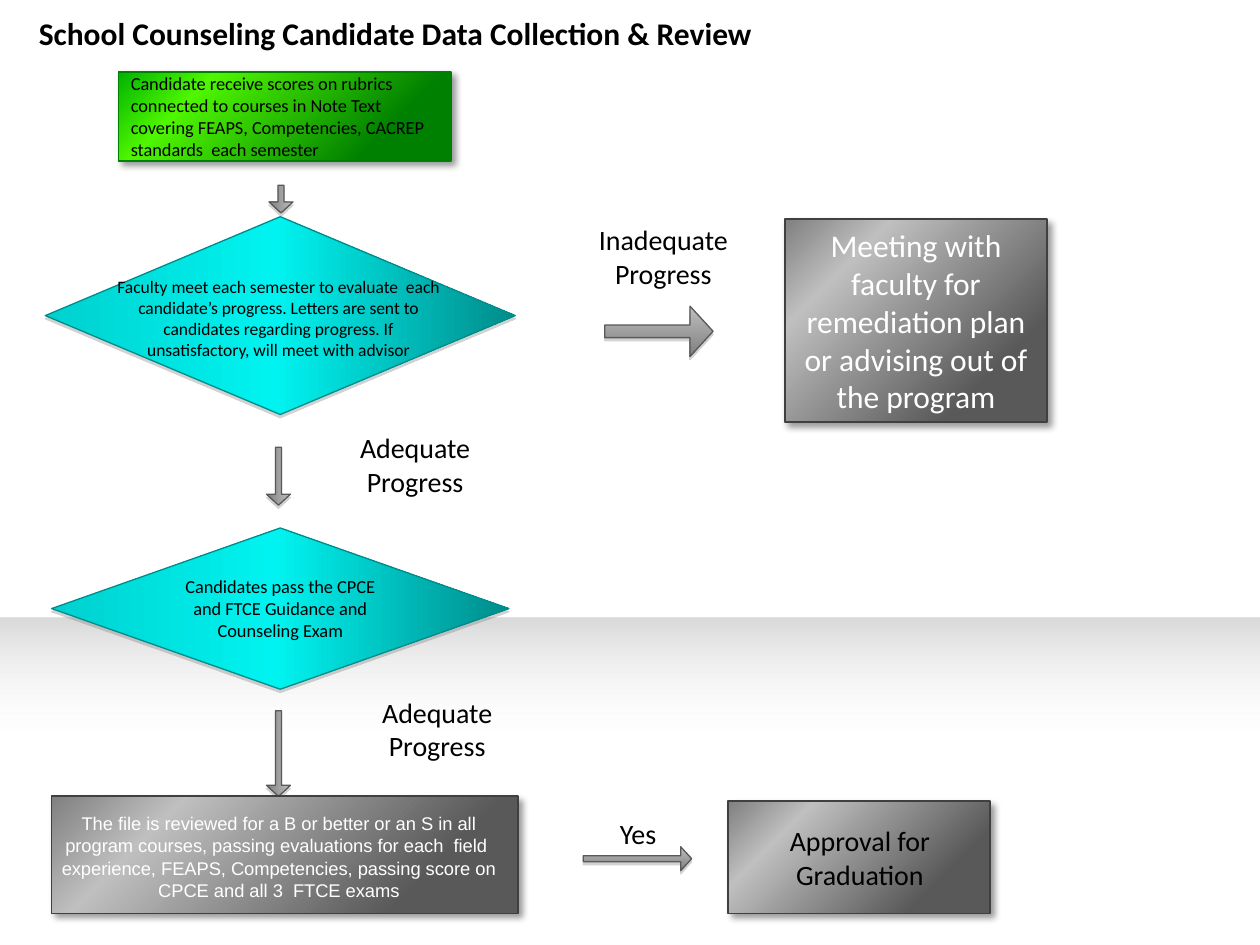
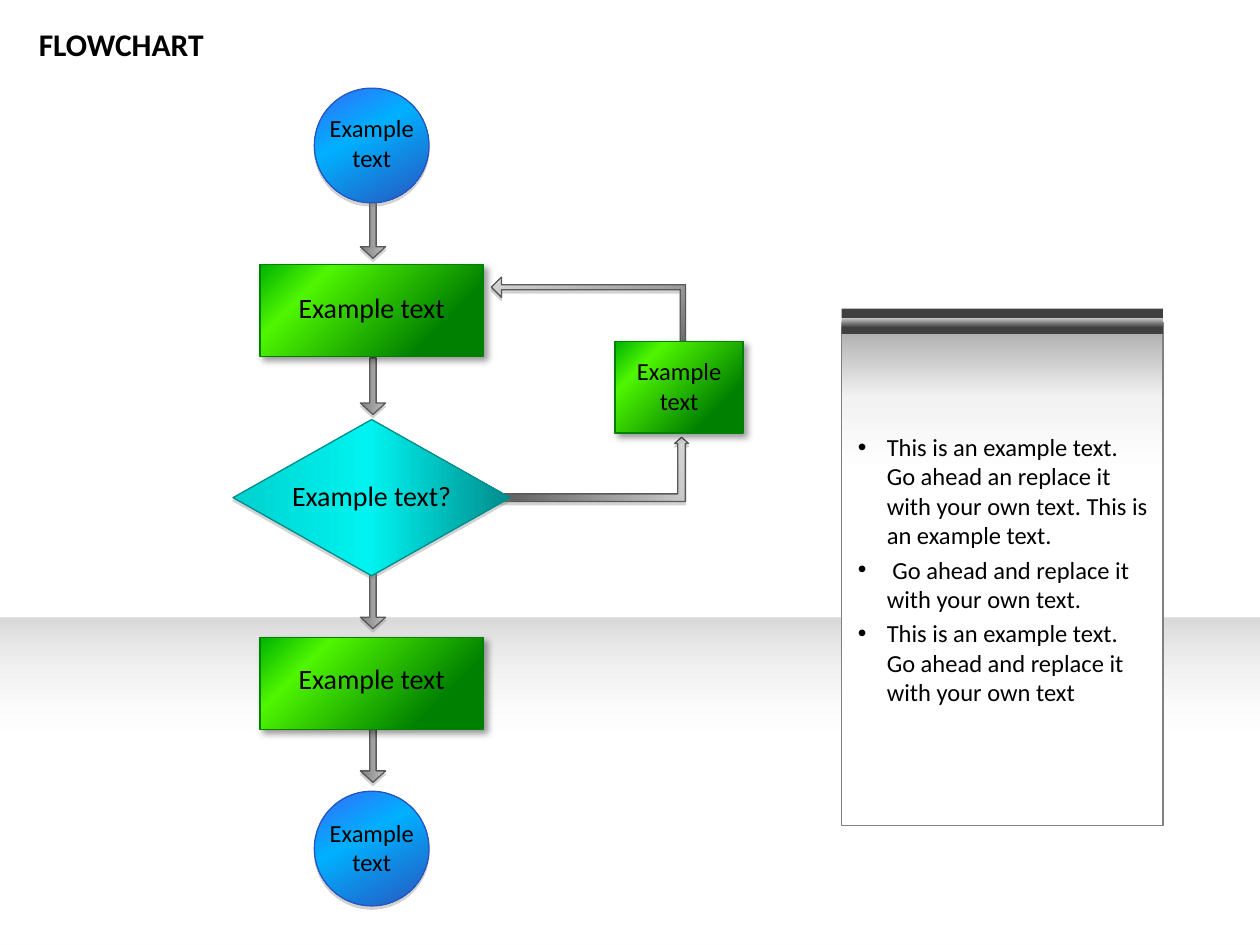
from lxml import etree
from pptx import Presentation
from pptx.dml.color import RGBColor
from pptx.enum.shapes import MSO_SHAPE
from pptx.enum.text import MSO_ANCHOR, MSO_AUTO_SIZE, PP_ALIGN
from pptx.oxml.ns import qn
from pptx.util import Inches, Pt

RECT, DIAMOND, OVAL = MSO_SHAPE.RECTANGLE, MSO_SHAPE.DIAMOND, MSO_SHAPE.OVAL
ARROW = MSO_SHAPE.RIGHT_ARROW
LEFT, CENTER = PP_ALIGN.LEFT, PP_ALIGN.CENTER
TOP, MIDDLE = MSO_ANCHOR.TOP, MSO_ANCHOR.MIDDLE
GROW = MSO_AUTO_SIZE.SHAPE_TO_FIT_TEXT
BLACK, WHITE = "000000", "FFFFFF"

# Shadows: colour, opacity %, blur pt, distance pt, direction
SOFT = ("808080", 35, 0, 1.8, 90)
DROP = (BLACK, 40, 4, 3, 45)

# Looks: gradient stops (position %, colour, opacity %), angle, line, shadow
GREEN = dict(stops=[(22, "008000"), (77, "4FF600"), (100, "00B300")],
             angle=225, line=("008000", 1), shadow=DROP)
GRAY = dict(stops=[(22, "595959"), (77, "BFBFBF"), (100, "808080")],
            angle=225, line=("404040", 1), shadow=DROP)
CYAN = dict(stops=[(0, "00D1CF"), (49, "00F3F0"), (100, "008C8B")],
            angle=0, line=("008C8B", 0.75), shadow=SOFT)
BLUE = dict(stops=[(0, "336FFA"), (2, "336FFA"), (40, "00B0FF"), (100, "2856BF")],
            angle=61, line=("2856BF", 0.75), shadow=SOFT)
STEEL = dict(stops=[(0, "BFBFBF"), (100, "7F7F7F")],
             angle=90, line=("595959", 0.75), shadow=SOFT)
ELBOW = dict(STEEL, stops=[(0, "595959"), (100, "D9D9D9")])
BAND = dict(stops=[(61, WHITE, 0), (100, "D9D9D9")], angle=270)
PANEL = dict(stops=[(70, WHITE), (85, "F2F2F2"), (100, "A6A6A6")],
             angle=270, line=("808080", 0.75))
GLOSS = dict(stops=[(0, "F3F3F3", 0), (100, "FFFCF9", 79)], angle=270)


def rgb(value):
    return RGBColor.from_string(value)


def add_color(parent, color, opacity=100):
    clr = etree.SubElement(parent, qn("a:srgbClr"), val=color)
    if opacity < 100:
        etree.SubElement(clr, qn("a:alpha"), val=str(opacity * 1000))


def paint(sp, stops=None, angle=0, solid=None, line=None, shadow=None):
    if solid:
        sp.fill.solid()
        sp.fill.fore_color.rgb = rgb(solid)
    else:
        sp.fill.gradient()
        sp.fill.gradient_angle = (360 - angle) % 360
        gs_list = sp._element.spPr.find(qn("a:gradFill")).find(qn("a:gsLst"))
        for gs in list(gs_list):
            gs_list.remove(gs)
        for pos, *color in stops:
            add_color(etree.SubElement(gs_list, qn("a:gs"), pos=str(pos * 1000)), *color)
    if line:
        sp.line.color.rgb = rgb(line[0])
        sp.line.width = Pt(line[1])
    else:
        sp.line.fill.background()
    sp.shadow.inherit = False
    if shadow:
        color, opacity, blur, dist, direction = shadow
        outer = etree.SubElement(
            sp._element.spPr.find(qn("a:effectLst")), qn("a:outerShdw"),
            blurRad=str(Pt(blur)), dist=str(Pt(dist)),
            dir=str(direction * 60000), algn="tl", rotWithShape="0")
        add_color(outer, color, opacity)


def write(sp, paragraphs, size, color=BLACK, align=CENTER, bold=False,
          font="Calibri", anchor=TOP):
    tf = sp.text_frame
    tf.word_wrap = True
    tf.vertical_anchor = anchor
    for i, text in enumerate(paragraphs):
        p = tf.add_paragraph() if i else tf.paragraphs[0]
        p.alignment = align
        r = p.add_run()
        r.text = text
        for key, value in dict(name=font, size=Pt(size), bold=bold).items():
            setattr(r.font, key, value)
        r.font.color.rgb = rgb(color)
    return tf


def shape(s, kind, x, y, w, h, look):
    sp = s.shapes.add_shape(kind, *map(Inches, (x, y, w, h)))
    paint(sp, **look)
    return sp


def label(s, x, y, w, h, text, size=16, **fmt):
    sp = s.shapes.add_textbox(*map(Inches, (x, y, w, h)))
    tf = write(sp, [text] if isinstance(text, str) else text, size, **fmt)
    tf.auto_size = GROW
    return tf


def block_arrow(s, x, y, length, width):
    """Arrow to the right from the top left corner x, y."""
    sp = shape(s, ARROW, x, y, length, width, STEEL)
    sp.adjustments[0], sp.adjustments[1] = 0.25, 0.458
    return sp


def down_arrow(s, cx, y, length, width):
    """Arrow downwards from y, centred on cx."""
    sp = block_arrow(s, cx - length / 2, y + (length - width) / 2, length, width)
    sp.rotation = 90


def elbow_arrow(s, start, corner, tip, half, head, head_len, angle):
    """Bent arrow outlined around the line start - corner - tip."""
    def unit(a, b):
        dx, dy = b[0] - a[0], b[1] - a[1]
        size = abs(dx) + abs(dy)
        return dx / size, dy / size

    u, v = unit(start, corner), unit(corner, tip)

    def at(point, along_u, along_v):
        return tuple(Inches(point[i] + along_u * u[i] + along_v * v[i]) for i in (0, 1))

    outline = [at(start, 0, half), at(corner, -half, half),
               at(tip, -half, -head_len), at(tip, -head, -head_len), at(tip, 0, 0),
               at(tip, head, -head_len), at(tip, half, -head_len),
               at(corner, half, -half), at(start, 0, -half)]
    fb = s.shapes.build_freeform(*outline[0])
    fb.add_line_segments(outline[1:], close=True)
    paint(fb.convert_to_shape(), **dict(ELBOW, angle=angle))


def new_slide(prs, title, y, w):
    s = prs.slides.add_slide(prs.slide_layouts[6])
    shape(s, RECT, 0, 4.9, 10, 2.6, BAND)
    label(s, 0.21, y, w, 0.4, title, 18, align=LEFT, bold=True)
    return s


# Slide 1: main column of the review
def review_column(s, x, y):
    for cx, top, length in ((1.87, 0.9, 0.22), (1.85, 2.98, 0.46), (1.85, 5.07, 0.68)):
        down_arrow(s, x + cx, y + top, length, 0.19)
    scores = shape(s, RECT, x + 0.58, y, 2.64, 0.71, GREEN)
    write(scores, ["Candidate receive scores on rubrics connected to courses in Note Text  "
                   "covering FEAPS, Competencies, CACREP standards  each semester"],
          10.5, align=LEFT, anchor=MIDDLE)
    shape(s, DIAMOND, x, y + 1.15, 3.73, 1.57, CYAN)
    label(s, x + 0.47, y + 1.57, 2.76, 0.77,
          "Faculty meet each semester to evaluate  each candidate’s progress. Letters are "
          "sent to candidates regarding progress. If unsatisfactory, will meet with advisor", 10)
    exams = shape(s, DIAMOND, x + 0.05, y + 3.62, 3.63, 1.28, CYAN)
    write(exams, ["Candidates pass the CPCE and FTCE Guidance and Counseling Exam"],
          10.5, anchor=MIDDLE)
    shape(s, RECT, x + 0.05, y + 5.75, 3.7, 0.93, GRAY)
    label(s, x + 0.02, y + 5.83, 3.67, 0.98,
          "The file is reviewed for a B or better or an S in all program courses, passing "
          "evaluations for each  field  experience, FEAPS, Competencies, passing score on "
          "CPCE and all 3  FTCE exams", 10.5, color=WHITE, font="Arial")
    for left, top, w in ((2.27, 2.8, 1.33), (2.37, 4.9, 1.48)):
        label(s, x + left, y + top, w, 0.64, "Adequate Progress")


# Slide 1: branch to remediation
def remediation_branch(s, x, y):
    label(s, x, y, 1.31, 0.64, "Inadequate Progress")
    block_arrow(s, x + 0.19, y + 0.71, 0.86, 0.4)
    meeting = shape(s, RECT, x + 1.62, y + 0.02, 2.08, 1.61, GRAY)
    write(meeting, ["Meeting with faculty for remediation plan or advising out of the program"],
          18, color=WHITE, anchor=MIDDLE)


# Slide 1: branch to graduation
def graduation_branch(s, x, y):
    block_arrow(s, x, y + 0.36, 0.86, 0.19)
    label(s, x + 0.17, y + 0.07, 0.53, 0.37, "Yes")
    shape(s, RECT, x + 1.15, y, 2.08, 0.89, GRAY)
    label(s, x + 1.41, y + 0.13, 1.57, 0.64, "Approval for Graduation")


# Slide 2: sample flow with a loop back
def sample_flow(s, x, y):
    cx = x + 1.1
    for top in (0.9, 2.14, 3.84, 5.06):
        down_arrow(s, cx + 0.01, y + top, 0.45, 0.2)
    elbow_arrow(s, (x + 2.07, y + 3.25), (x + 3.56, y + 3.25), (x + 3.56, y + 2.77),
                0.03, 0.055, 0.05, 339)
    elbow_arrow(s, (x + 3.57, y + 2.23), (x + 3.57, y + 1.58), (x + 2.05, y + 1.58),
                0.02, 0.08, 0.08, 249)

    # A node is kind, look, centre, width, height; a caption is width, height, text, size
    circle = (OVAL, BLUE, cx, 0.91, 0.91)
    step = (RECT, GREEN, cx, 1.77, 0.73)
    loop = (RECT, GREEN, x + 3.54, 1.02, 0.73)
    choice = (DIAMOND, CYAN, cx, 2.2, 1.24)
    small = (1.02, 0.57, "Example text", 14)
    large = (1.66, 0.37, "Example text", 16)
    question = (1.66, 0.37, "Example text?", 16)
    nodes = ((circle, 0, 0.15, small), (step, 1.4, 0.16, large),
             (choice, 2.63, 0.42, question), (loop, 2.01, 0.07, small),
             (step, 4.36, 0.14, large), (circle, 5.58, 0.16, small))
    for (kind, look, mid, w, h), top, drop, (tw, th, text, size) in nodes:
        shape(s, kind, mid - w / 2, y + top, w, h, look)
        label(s, mid - tw / 2, y + top + drop, tw, th, text, size)


# Slide 2: notes panel with a dark header bar
def notes_panel(s, x, y, w):
    shape(s, RECT, x, y + 0.11, w, 3.99, PANEL)
    shape(s, RECT, x, y, w, 0.2, dict(solid="404040"))
    shape(s, RECT, x, y + 0.08, w, 0.06, GLOSS)
    tf = label(s, x + 0.03, y + 0.93, w - 0.04, 2.6, [
        "This is an example text. Go ahead an replace it with your own text. "
        "This is an example text.",
        " Go ahead and replace it with your own text.",
        "This is an example text. Go ahead and replace it with your own text",
    ], 14, align=LEFT)
    indent = Inches(0.23)
    for p in tf.paragraphs:
        p.space_before = Pt(2.8)
        ppr = p._p.get_or_add_pPr()
        ppr.set("marL", str(indent))
        ppr.set("indent", str(-indent))
        etree.SubElement(ppr, qn("a:buFont"), typeface="Arial")
        etree.SubElement(ppr, qn("a:buChar"), char="•")


def main():
    prs = Presentation()
    prs.slide_width, prs.slide_height = Inches(10), Inches(7.5)

    s = new_slide(prs, "School Counseling Candidate Data Collection & Review", 0.06, 7.4)
    review_column(s, 0.36, 0.57)
    remediation_branch(s, 4.61, 1.72)
    graduation_branch(s, 4.63, 6.36)

    s = new_slide(prs, "FLOWCHART", 0.15, 1.64)
    sample_flow(s, 1.85, 0.7)
    notes_panel(s, 6.68, 2.45, 2.55)

    prs.save("out.pptx")


if __name__ == "__main__":
    main()
